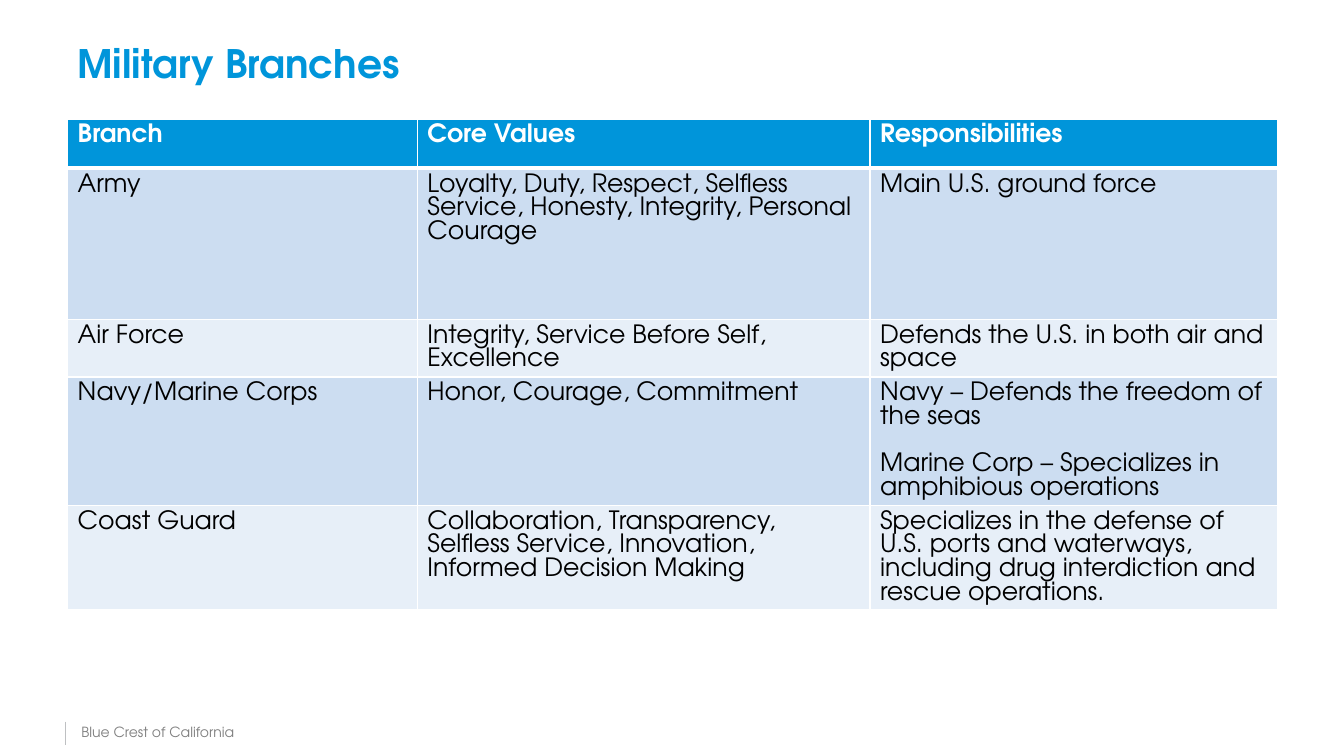
import pptx
import pptx.util
import pptx.dml.color
import pptx.enum.shapes
import pptx.enum.text
import pptx.oxml
import pptx.oxml.ns

Inches = pptx.util.Inches
Pt = pptx.util.Pt
RGBColor = pptx.dml.color.RGBColor
ANCHOR = pptx.enum.text.MSO_ANCHOR

BLUE = RGBColor(0x00, 0x95, 0xDA)
PALE = RGBColor(0xCC, 0xDD, 0xF1)
LIGHT = RGBColor(0xE7, 0xEF, 0xF8)
WHITE = RGBColor(0xFF, 0xFF, 0xFF)
BLACK = RGBColor(0x00, 0x00, 0x00)
GRAY = RGBColor(0x80, 0x80, 0x80)
RULE = RGBColor(0xBE, 0xC0, 0xC2)
FONT = "TeX Gyre Adventor"
LINE = Pt(16.9)

COLS = [3.47, 4.49, 4.04]
HEIGHTS = [0.49, 1.5, 0.57, 1.27, 1.03]
ROWS = [
    ["Branch", "Core Values", "Responsibilities"],
    ["Army",
     "Loyalty, Duty, Respect, Selfless Service, Honesty, Integrity, "
     "Personal Courage",
     "Main U.S. ground force"],
    ["Air Force", "Integrity, Service Before Self, Excellence",
     "Defends the U.S. in both air and space"],
    ["Navy/Marine Corps", "Honor, Courage, Commitment",
     "Navy – Defends the freedom of the seas\n"
     "Marine Corp – Specializes in amphibious operations"],
    ["Coast Guard",
     "Collaboration, Transparency, Selfless Service, Innovation, "
     "Informed Decision Making",
     "Specializes in the defense of U.S. ports and waterways, including "
     "drug interdiction and rescue operations."],
]


def style(para, size, color, bold=False):
    for run in para.runs:
        run.font.name = FONT
        run.font.size = Pt(size)
        run.font.color.rgb = color
        run.font.bold = bold


def add_title(slide, text):
    title = slide.shapes.title
    title.left, title.top = Inches(0.67), Inches(0.3)
    title.width, title.height = Inches(12), Inches(0.65)
    frame = title.text_frame
    frame.text = text
    frame.vertical_anchor = ANCHOR.MIDDLE
    para = frame.paragraphs[0]
    para.alignment = pptx.enum.text.PP_ALIGN.LEFT
    style(para, 28, BLUE, True)


def set_edges(cell, widths):
    """Draw white borders; widths maps a side (L, R, T, B) to points."""
    props = cell._tc.get_or_add_tcPr()
    for spot, side in enumerate("LRTB"):
        edge = pptx.oxml.parse_xml(
            f'<a:ln{side} {pptx.oxml.ns.nsdecls("a")} '
            f'w="{Pt(widths[side])}"><a:solidFill>'
            f'<a:srgbClr val="{WHITE}"/></a:solidFill></a:ln{side}>')
        props.insert(spot, edge)


def fill_cell(cell, text, row):
    head = row == 0
    cell.fill.solid()
    cell.fill.fore_color.rgb = BLUE if head else PALE if row % 2 else LIGHT
    set_edges(cell, {"L": 1, "R": 1, "T": 3 if row == 1 else 1,
                     "B": 3 if head else 1})
    cell.text_frame.text = text
    for spot, para in enumerate(cell.text_frame.paragraphs):
        para.line_spacing = LINE
        if spot:
            para.space_before = LINE
        style(para, 18, WHITE if head else BLACK, head)


def add_grid(slide):
    frame = slide.shapes.add_table(
        len(ROWS), len(COLS), Inches(0.67), Inches(1.18),
        Inches(sum(COLS)), Inches(sum(HEIGHTS)))
    table = frame.table
    for col, width in zip(table.columns, COLS):
        col.width = Inches(width)
    for row, texts in enumerate(ROWS):
        table.rows[row].height = Inches(HEIGHTS[row])
        for col, text in enumerate(texts):
            fill_cell(table.cell(row, col), text, row)


def add_footer(slide, text):
    rule = slide.shapes.add_connector(
        pptx.enum.shapes.MSO_CONNECTOR.STRAIGHT,
        Inches(0.65), Inches(7.16), Inches(0.65), Inches(7.39))
    rule.line.color.rgb = RULE
    rule.line.width = Pt(0.5)
    rule._element.spPr.append(pptx.oxml.parse_xml(
        f'<a:effectLst {pptx.oxml.ns.nsdecls("a")}/>'))
    box = slide.shapes.add_textbox(
        Inches(0.71), Inches(7.13), Inches(2.86), Inches(0.27))
    box.text_frame.word_wrap = True
    box.text_frame.text = text
    style(box.text_frame.paragraphs[0], 10, GRAY)


def main():
    deck = pptx.Presentation()
    deck.slide_width, deck.slide_height = Inches(13.33), Inches(7.5)
    slide = deck.slides.add_slide(deck.slide_layouts[5])
    add_footer(slide, "Blue Crest of California")
    add_title(slide, "Military Branches")
    add_grid(slide)
    deck.save("out.pptx")


if __name__ == "__main__":
    main()
